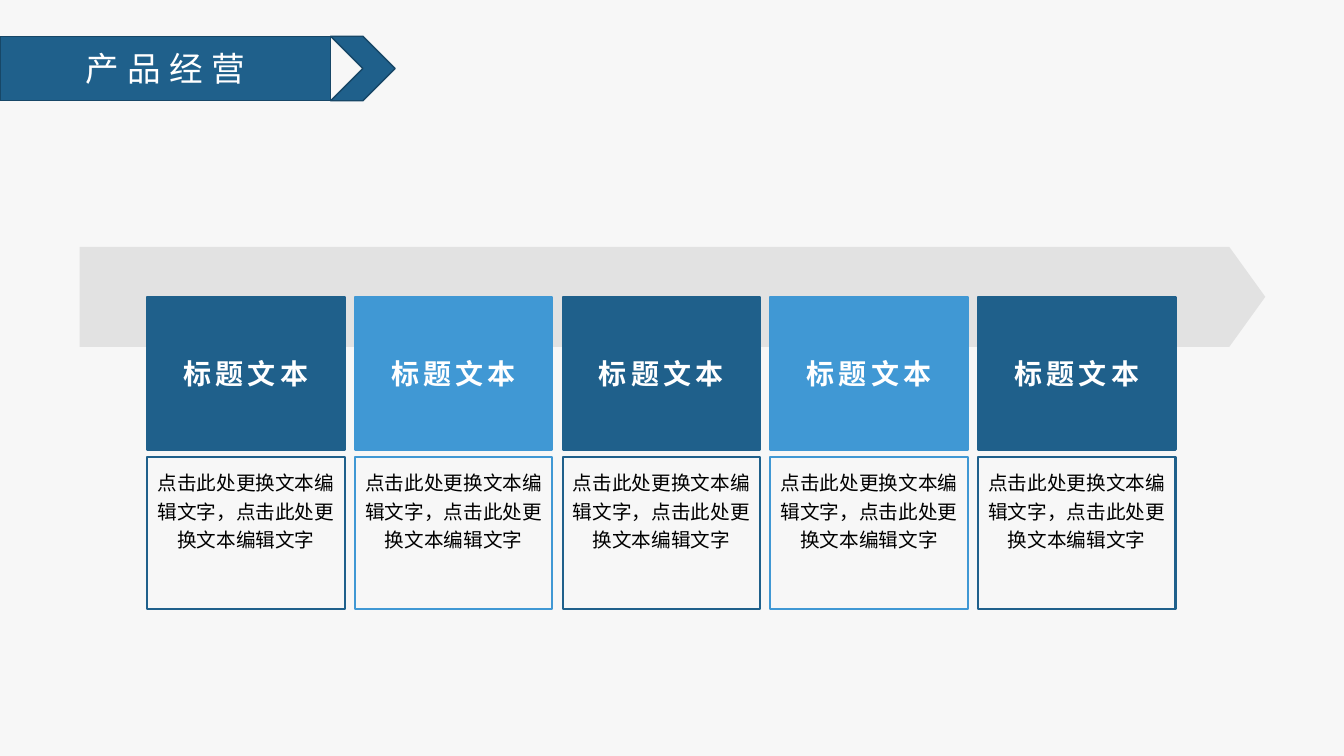
from lxml import etree
from pptx import Presentation
from pptx.dml.color import RGBColor
from pptx.enum.shapes import MSO_SHAPE
from pptx.enum.text import MSO_ANCHOR, MSO_AUTO_SIZE, PP_ALIGN
from pptx.oxml.ns import qn
from pptx.util import Inches, Pt

RECTANGLE, PENTAGON, CHEVRON = MSO_SHAPE.RECTANGLE, MSO_SHAPE.PENTAGON, MSO_SHAPE.CHEVRON
TOP, MIDDLE = MSO_ANCHOR.TOP, MSO_ANCHOR.MIDDLE

FONT = "Noto Sans CJK SC"
NAVY, BLUE, EDGE = "1F608B", "4098D4", "174767"
WHITE, BLACK, PAPER, BAND_GREY = "FFFFFF", "000000", "F7F7F7", "CCCCCC"

HEADING = "产品经营"
BODY = "点击此处更换文本编辑文字，点击此处更换文本编辑文字"
STEPS = [
    ("标题文本", BODY, NAVY),
    ("标题文本", BODY, BLUE),
    ("标题文本", BODY, NAVY),
    ("标题文本", BODY, BLUE),
    ("标题文本", BODY, NAVY),
]

BANNER_TOP, BANNER_WIDTH, BANNER_HEIGHT = 0.36, 3.28, 0.64
STEP_LEFT, STEP_PITCH = 1.46, 2.06
STEP_WIDTH, STEP_HEIGHT = 1.96, 1.51
CAPTION_TOP, DETAIL_TOP = 2.95, 4.53


def color(value):
    return RGBColor.from_string(value)


def paint(shape, fill, line, line_width):
    if fill:
        shape.fill.solid()
        shape.fill.fore_color.rgb = color(fill)
    else:
        shape.fill.background()
    if line:
        shape.line.color.rgb = color(line)
        shape.line.width = Pt(line_width)
    else:
        shape.line.fill.background()


def add_block(kind, left, top, width, height, fill, line=None, line_width=1.5):
    block = slide.shapes.add_shape(
        kind, Inches(left), Inches(top), Inches(width), Inches(height))
    block.shadow.inherit = False
    paint(block, fill, line, line_width)
    return block


def write(shape, text, size, text_color, anchor, insets,
          bold=False, tracking=0, line_spacing=1.0):
    frame = shape.text_frame
    frame.word_wrap = True
    frame.auto_size = MSO_AUTO_SIZE.NONE
    frame.vertical_anchor = anchor
    (frame.margin_left, frame.margin_top,
     frame.margin_right, frame.margin_bottom) = map(Inches, insets)
    frame.text = text
    paragraph = frame.paragraphs[0]
    paragraph.alignment = PP_ALIGN.CENTER
    paragraph.line_spacing = line_spacing
    font = paragraph.font
    font.name, font.size, font.bold = FONT, Pt(size), bold
    font.color.rgb = color(text_color)
    properties = paragraph._p.pPr.find(qn("a:defRPr"))
    properties.set("spc", str(tracking * 100))
    etree.SubElement(properties, qn("a:ea"), typeface=FONT)


prs = Presentation()
prs.slide_width, prs.slide_height = Inches(13.33), Inches(7.5)
slide = prs.slides.add_slide(prs.slide_layouts[5])
slide.background.fill.solid()
slide.background.fill.fore_color.rgb = color(PAPER)

banner = slide.shapes.title
banner.left, banner.top = Inches(0), Inches(BANNER_TOP)
banner.width, banner.height = Inches(BANNER_WIDTH), Inches(BANNER_HEIGHT)
outline = etree.SubElement(banner._element.spPr, qn("a:prstGeom"), prst="homePlate")
etree.SubElement(outline, qn("a:avLst"))
paint(banner, NAVY, EDGE, 1)
write(banner, HEADING, 24, WHITE, MIDDLE, (0.1, 0.05, 0.1, 0.05), tracking=6)

add_block(CHEVRON, BANNER_WIDTH, BANNER_TOP, BANNER_HEIGHT, BANNER_HEIGHT, NAVY, EDGE, 1)

band = add_block(PENTAGON, 0.79, 2.45, 11.76, 0.99, BAND_GREY)
band.adjustments[0] = 0.36
band_color = band._element.spPr.find(qn("a:solidFill"))[0]
etree.SubElement(band_color, qn("a:alpha"), val="48000")

for index, (caption, detail, accent) in enumerate(STEPS):
    left = STEP_LEFT + index * STEP_PITCH
    caption_box = add_block(
        RECTANGLE, left, CAPTION_TOP, STEP_WIDTH, STEP_HEIGHT, accent, accent)
    write(caption_box, caption, 20, WHITE, MIDDLE, (0.05, 0.05, 0.05, 0.05),
          bold=True, tracking=3)
    detail_box = add_block(
        RECTANGLE, left, DETAIL_TOP, STEP_WIDTH, STEP_HEIGHT, None, accent)
    write(detail_box, detail, 14, BLACK, TOP, (0.1, 0.1, 0.1, 0.05), line_spacing=1.2)

prs.save("out.pptx")
